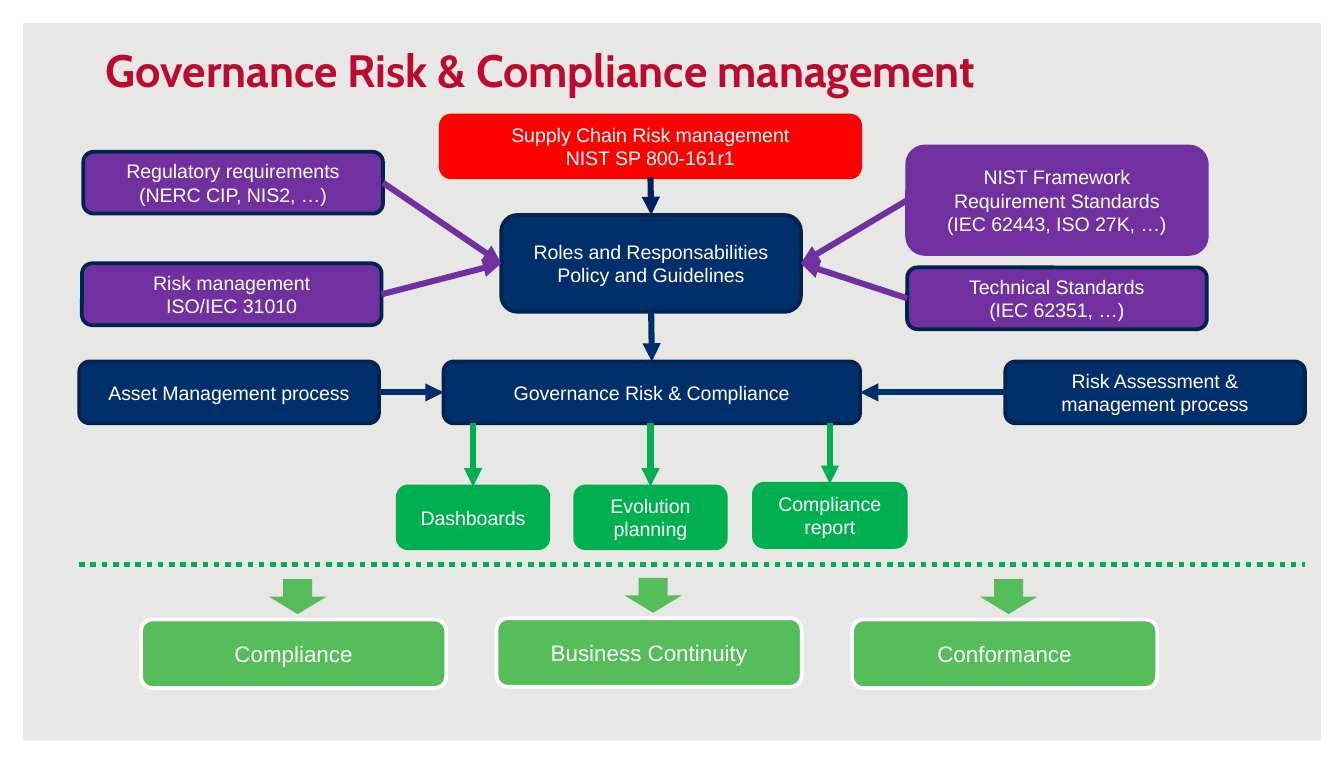
import pptx
import pptx.util
import pptx.dml.color
import pptx.enum.dml
import pptx.enum.shapes
import pptx.enum.text
import pptx.oxml.ns
import lxml.etree

Inches, Pt = pptx.util.Inches, pptx.util.Pt
SHAPE = pptx.enum.shapes.MSO_SHAPE
STRAIGHT = pptx.enum.shapes.MSO_CONNECTOR.STRAIGHT
ANCHOR = pptx.enum.text.MSO_ANCHOR
ALIGN = pptx.enum.text.PP_ALIGN

COLORS = {
    "background": "E7E7E5", "white": "FFFFFF", "title": "BA0C2F",
    "navy": "002F6C", "navy edge": "002350", "navy arrow": "002E6A",
    "dark arrow": "002060", "purple": "7030A0", "red": "FF0000",
    "green": "00B050", "light green": "55BD5A",
}

# Content: name -> (lines, left, top, width, height, fill, edge)
TITLE = "Governance Risk & Compliance management"
BOXES = {
    "grc": (["Governance Risk & Compliance"], 3.3, 2.69, 3.1, 0.46, "navy", "navy edge"),
    "roles": (["Roles and Responsabilities", "Policy and Guidelines"],
              3.73, 1.6, 2.23, 0.72, "navy", "navy edge"),
    "assets": (["Asset Management process"], 0.59, 2.69, 2.23, 0.46, "navy", "navy edge"),
    "assessment": (["Risk Assessment & management process"],
                   7.48, 2.69, 2.23, 0.46, "navy", "navy edge"),
    "dashboards": (["Dashboards"], 2.96, 3.62, 1.12, 0.46, "green", "green"),
    "evolution": (["Evolution planning"], 4.28, 3.62, 1.12, 0.46, "green", "green"),
    "report": (["Compliance report"], 5.61, 3.6, 1.13, 0.47, "green", "green"),
    "regulatory": (["Regulatory requirements", "(NERC CIP, NIS2, …)"],
                   0.62, 1.13, 2.23, 0.46, "purple", "navy edge"),
    "framework": (["NIST Framework", "Requirement Standards", "(IEC 62443, ISO 27K, …)"],
                  6.75, 1.09, 2.23, 0.8, "purple", "purple"),
    "technical": (["Technical Standards", "(IEC 62351, …)"],
                  6.75, 1.99, 2.23, 0.46, "purple", "navy edge"),
    "risk": (["Risk management", "ISO/IEC 31010"], 0.61, 1.96, 2.23, 0.46, "purple", "navy edge"),
    "supply chain": (["Supply Chain Risk management", "NIST SP 800-161r1"],
                     3.28, 0.86, 3.12, 0.46, "red", "red"),
}
# Connection sites of a rounded rectangle
TOP, LEFT, BOTTOM, RIGHT = range(4)
FLOWS = [
    ("supply chain", BOTTOM, "roles", TOP, "dark arrow"),
    ("roles", BOTTOM, "grc", TOP, "navy arrow"),
    ("assets", RIGHT, "grc", LEFT, "navy arrow"),
    ("assessment", LEFT, "grc", RIGHT, "navy arrow"),
    ("regulatory", RIGHT, "roles", LEFT, "purple"),
    ("risk", RIGHT, "roles", LEFT, "purple"),
    ("framework", LEFT, "roles", RIGHT, "purple"),
    ("technical", LEFT, "roles", RIGHT, "purple"),
]
DELIVERABLES = ["dashboards", "evolution", "report"]
OUTCOMES = [("Compliance", 4.61), ("Business Continuity", 4.6), ("Conformance", 4.61)]
OUTCOME_LEFT, OUTCOME_STEP = 1.05, 2.645
OUTCOME_W, OUTCOME_H = 2.27, 0.51
ARROW_W, ARROW_H, ARROW_RISE = 0.43, 0.26, 0.3
ARROW_SHIFT = 0.03  # arrows sit slightly right of the box centres


def rgb(name):
    return pptx.dml.color.RGBColor.from_string(COLORS[name])


def add_run(paragraph, text, size, font="Arial", color="white", bold=False):
    run = paragraph.add_run()
    run.text = text
    run.font.name, run.font.size, run.font.bold = font, Pt(size), bold
    run.font.color.rgb = rgb(color)


def add_block(kind, left, top, width, height, fill, edge=None, lines=(), size=10.5):
    block = slide.shapes.add_shape(kind, *map(Inches, (left, top, width, height)))
    block.shadow.inherit = False
    block.fill.solid()
    block.fill.fore_color.rgb = rgb(fill)
    if edge:
        block.line.color.rgb = rgb(edge)
        block.line.width = Pt(2)
    else:
        block.line.fill.background()
    frame = block.text_frame
    frame.word_wrap = True
    frame.vertical_anchor = ANCHOR.MIDDLE
    for i, line in enumerate(lines):
        paragraph = frame.paragraphs[0] if i == 0 else frame.add_paragraph()
        paragraph.alignment = ALIGN.CENTER
        add_run(paragraph, line, size)
    return block


def add_line(x1, y1, x2, y2, color, width=3.25, arrow=True):
    line = slide.shapes.add_connector(STRAIGHT, x1, y1, x2, y2)
    line.line.color.rgb = rgb(color)
    line.line.width = Pt(width)
    if arrow:
        head = lxml.etree.SubElement(line.line._get_or_add_ln(), pptx.oxml.ns.qn("a:tailEnd"))
        head.set("type", "triangle")
    lxml.etree.SubElement(line._element.spPr, pptx.oxml.ns.qn("a:effectLst"))
    return line


prs = pptx.Presentation()
prs.slide_width, prs.slide_height = Inches(10), Inches(5.67)
slide = prs.slides.add_slide(prs.slide_layouts[6])

# Background and white border
slide.background.fill.solid()
slide.background.fill.fore_color.rgb = rgb("background")
border = add_block(SHAPE.FRAME, 0, 0, 10, 5.68, "white")
border.adjustments[0] = 0.03

# Title
title = slide.shapes.add_textbox(*map(Inches, (0.69, 0.32, 8.62, 0.5))).text_frame
title.word_wrap = True
title.vertical_anchor = ANCHOR.BOTTOM
title.margin_left = title.margin_right = Inches(0.1)
title.margin_top = title.margin_bottom = Inches(0.1)
add_run(title.paragraphs[0], TITLE, 24.3, "Cabin", "title", True)

# Process boxes
boxes = {
    name: add_block(SHAPE.ROUNDED_RECTANGLE, *place, fill, edge, lines)
    for name, (lines, *place, fill, edge) in BOXES.items()
}

# Flows between boxes
for source, source_site, target, target_site, color in FLOWS:
    flow = add_line(0, 0, 0, 0, color)
    flow.begin_connect(boxes[source], source_site)
    flow.end_connect(boxes[target], target_site)

# Flows down to the deliverables
grc_bottom = boxes["grc"].top + boxes["grc"].height
for name in DELIVERABLES:
    box = boxes[name]
    center = box.left + box.width // 2
    add_line(center, grc_bottom, center, box.top, "green").end_connect(box, TOP)

# Dotted divider
divider = add_line(*map(Inches, (0.59, 4.2, 9.71, 4.2)), "green", 3, arrow=False)
divider.line.dash_style = pptx.enum.dml.MSO_LINE.ROUND_DOT

# Outcomes with their block arrows
for i, (outcome, top) in enumerate(OUTCOMES):
    left = OUTCOME_LEFT + i * OUTCOME_STEP
    add_block(SHAPE.ROUNDED_RECTANGLE, left, top, OUTCOME_W, OUTCOME_H,
              "light green", "white", [outcome], 12)
    arrow_left = left + (OUTCOME_W - ARROW_W) / 2 + ARROW_SHIFT
    add_block(SHAPE.DOWN_ARROW, arrow_left, top - ARROW_RISE, ARROW_W, ARROW_H, "light green")

prs.save("out.pptx")
